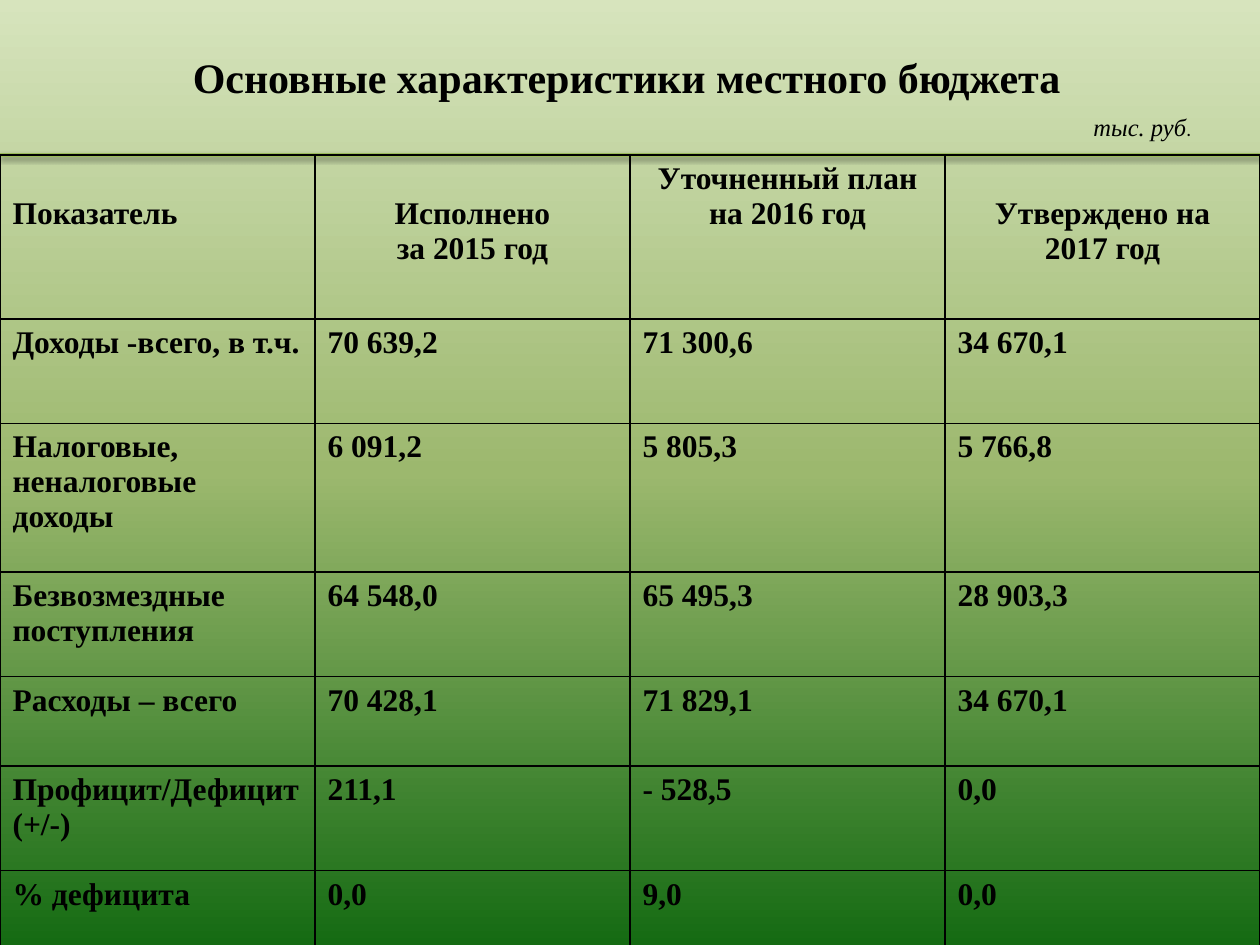
"""Build a slide with the main figures of a local budget."""
import copy
from dataclasses import dataclass

import pptx
import pptx.dml.color
import pptx.enum.shapes
import pptx.enum.text
import pptx.oxml
import pptx.oxml.ns
import pptx.util
from pptx.util import Inches

FONT = "Times New Roman"
BLACK = "000000"
LEFT = pptx.enum.text.PP_ALIGN.LEFT
CENTER = pptx.enum.text.PP_ALIGN.CENTER
TOP = 1.23
NS = pptx.oxml.ns.nsdecls("a")


@dataclass
class Row:
    """A table row: its height and its cell texts."""
    height: float
    cells: tuple[str, ...]


@dataclass
class Head:
    """A heading cell: its text, alignment and top margin."""
    text: str
    align: int
    top: float


HEADS = (
    Head("Показатель", LEFT, 0.33),
    Head("Исполнено\nза 2015 год", CENTER, 0.33),
    Head("Уточненный план на 2016 год", CENTER, 0.05),
    Head("Утверждено на\n2017 год", CENTER, 0.33),
)
ROWS = (
    Row(0.83, ("Доходы -всего, в т.ч.", "70 639,2", "71 300,6", "34 670,1")),
    Row(1.18, ("Налоговые, неналоговые доходы", "6 091,2", "5 805,3", "5 766,8")),
    Row(0.83, ("Безвозмездные поступления", "64 548,0", "65 495,3", "28 903,3")),
    Row(0.71, ("Расходы – всего", "70 428,1", "71 829,1", "34 670,1")),
    Row(0.83, ("Профицит/Дефицит (+/-)", "211,1", "- 528,5", "0,0")),
    Row(0.71, ("% дефицита", "0,0", "9,0", "0,0")),
)


def color(code: str) -> pptx.dml.color.RGBColor:
    """Turn a hex string into a colour."""
    return pptx.dml.color.RGBColor.from_string(code)


def style(font, size: float, name: str = FONT, bold: bool = False, italic: bool = False) -> None:
    """Set the look of a font."""
    font.name, font.size = name, pptx.util.Pt(size)
    font.bold, font.italic = bold, italic
    font.color.rgb = color(BLACK)


def paint(slide) -> None:
    """Fill the background with a green gradient."""
    fill = slide.background.fill
    fill.gradient()
    fill.gradient_angle = 270
    last = list(slide.element.iter(pptx.oxml.ns.qn("a:gs")))[-1]
    last.addprevious(copy.deepcopy(last))
    shades = ((0, "D7E4BD"), (0.5, "9CB86E"), (1, "156B13"))
    for stop, (place, code) in zip(fill.gradient_stops, shades):
        stop.position = place
        stop.color.rgb = color(code)


def rule(slide) -> None:
    """Draw the shadowed line above the table."""
    line = slide.shapes.add_connector(
        pptx.enum.shapes.MSO_CONNECTOR.STRAIGHT,
        Inches(10), Inches(TOP), Inches(0), Inches(TOP))
    line.line.color.rgb = color("9BBB59")
    line.line.width = pptx.util.Pt(2)
    line.element.spPr.append(pptx.oxml.parse_xml(
        f'<a:effectLst {NS}><a:outerShdw blurRad="40000" dist="20000" dir="5400000" '
        f'rotWithShape="0"><a:srgbClr val="{BLACK}"><a:alpha val="38000"/>'
        '</a:srgbClr></a:outerShdw></a:effectLst>'))


def title(slide) -> None:
    """Place and format the title."""
    shape = slide.shapes.title
    shape.left, shape.top = Inches(1.38), Inches(0.36)
    shape.width, shape.height = Inches(7.3), Inches(0.5)
    frame = shape.text_frame
    frame.text = "Основные характеристики местного бюджета"
    frame.word_wrap = False
    frame.margin_left = Inches(0.15)
    frame.auto_size = pptx.enum.text.MSO_AUTO_SIZE.NONE
    frame.vertical_anchor = pptx.enum.text.MSO_ANCHOR.TOP
    frame.paragraphs[0].alignment = LEFT
    style(frame.paragraphs[0].font, 24, bold=True)


def border(cell) -> None:
    """Give a cell thin black edges and no fill."""
    props = cell._tc.get_or_add_tcPr()
    for side in ("lnL", "lnR", "lnT", "lnB"):
        props.append(pptx.oxml.parse_xml(
            f'<a:{side} {NS} w="12700"><a:solidFill><a:srgbClr val="{BLACK}"/>'
            f'</a:solidFill></a:{side}>'))
    cell.fill.background()


def write(cell, text: str, align: int = LEFT, top: float = 0.05) -> None:
    """Write bold text into a bordered cell."""
    cell.text = text
    cell.margin_top = Inches(top)
    for para in cell.text_frame.paragraphs:
        para.alignment = align
        style(para.font, 18, bold=True)
    border(cell)


def budget(slide) -> None:
    """Add the table of budget figures."""
    heights = [1.3] + [row.height for row in ROWS]
    table = slide.shapes.add_table(
        len(heights), len(HEADS), Inches(0), Inches(TOP),
        Inches(10), Inches(sum(heights))).table
    table.first_row = table.horz_banding = False
    for row, height in zip(table.rows, heights):
        row.height = Inches(height)
    for col, head in enumerate(HEADS):
        write(table.cell(0, col), head.text, head.align, head.top)
        for num, row in enumerate(ROWS, 1):
            write(table.cell(num, col), row.cells[col])


def unit(slide) -> None:
    """Add the unit of measure."""
    frame = slide.shapes.add_textbox(
        Inches(8.58), Inches(0.84), Inches(1.42), Inches(0.39)).text_frame
    frame.word_wrap = True
    para = frame.paragraphs[0]
    for text, size, name, italic in (("тыс. руб", 14, FONT, True), (".", 11, "Calibri", False)):
        run = para.add_run()
        run.text = text
        style(run.font, size, name, italic=italic)


def main() -> None:
    """Build and save the deck."""
    deck = pptx.Presentation()
    deck.slide_width, deck.slide_height = Inches(10), Inches(7.5)
    slide = deck.slides.add_slide(deck.slide_layouts[5])
    paint(slide)
    rule(slide)
    title(slide)
    budget(slide)
    unit(slide)
    deck.save("out.pptx")


if __name__ == "__main__":
    main()
